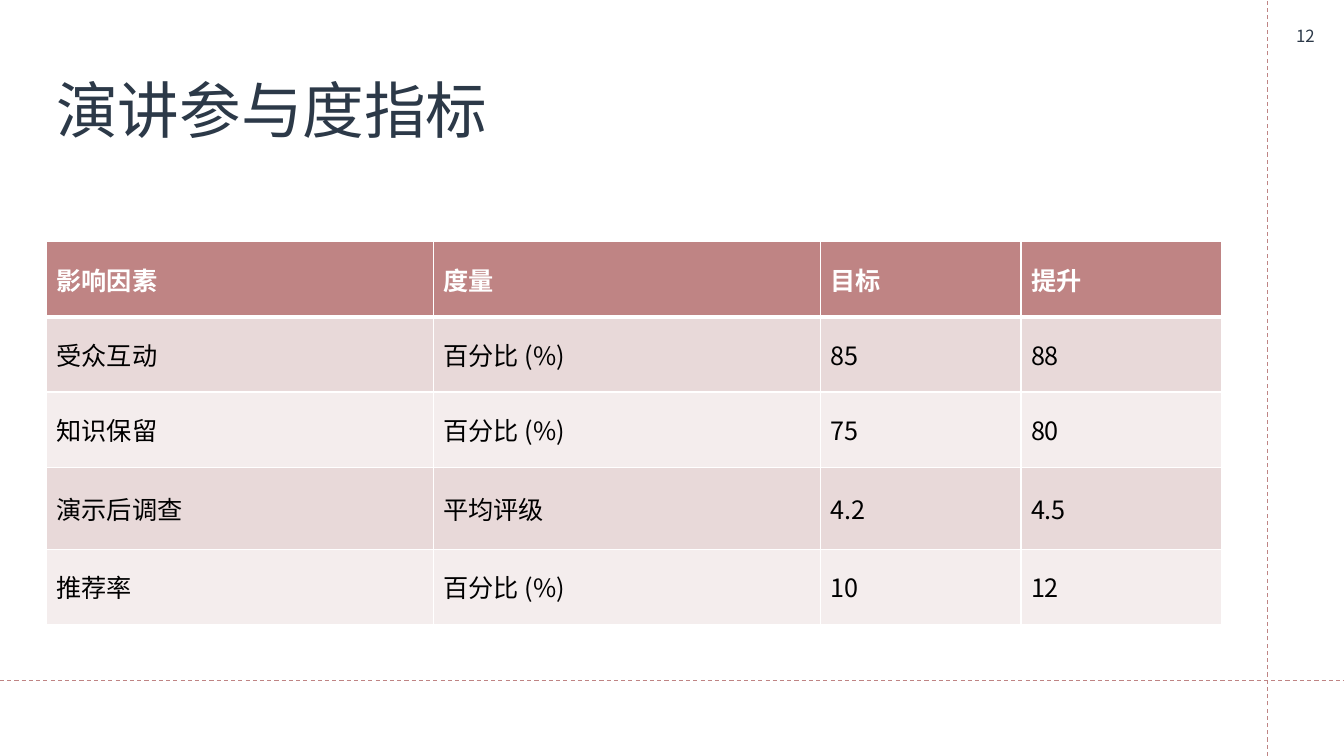
from lxml.etree import SubElement
from pptx import Presentation
from pptx.dml.color import RGBColor
from pptx.enum.dml import MSO_LINE
from pptx.enum.shapes import MSO_CONNECTOR
from pptx.enum.text import MSO_ANCHOR, PP_ALIGN
from pptx.oxml.ns import qn
from pptx.util import Cm, Pt

COLORS = {
    "ink": "2C3948",
    "rose": "BF8484",
    "blush": "E8D9D9",
    "pale": "F4EDED",
    "white": "FFFFFF",
    "black": "000000",
}
FONT = "Noto Sans CJK SC"
WIDTH, HEIGHT = 33.87, 19.05

METRICS = [
    ["影响因素", "度量", "目标", "提升"],
    ["受众互动", "百分比 (%)", "85", "88"],
    ["知识保留", "百分比 (%)", "75", "80"],
    ["演示后调查", "平均评级", "4.2", "4.5"],
    ["推荐率", "百分比 (%)", "10", "12"],
]
COLUMN_WIDTHS = [9.75, 9.75, 5.06, 5.06]
ROW_HEIGHTS = [1.9, 1.9, 1.9, 2.06, 1.9]


class SlideBuilder:
    def __init__(self, slide):
        self.slide = slide

    def color(self, name):
        return RGBColor.from_string(COLORS[name])

    def style_words(self, paragraph, words, size, color, bold=False):
        paragraph.text = words
        font = paragraph.font
        font.name = FONT
        font.size = Pt(size)
        font.bold = bold
        font.color.rgb = self.color(color)
        for run in paragraph.runs:
            SubElement(run.font._element, qn("a:ea"), typeface=FONT)

    def text(self, words, left, top, width, height, size, align=PP_ALIGN.LEFT, spacing=1.0):
        frame = self.slide.shapes.add_textbox(Cm(left), Cm(top), Cm(width), Cm(height)).text_frame
        frame.word_wrap = True
        frame.vertical_anchor = MSO_ANCHOR.MIDDLE
        paragraph = frame.paragraphs[0]
        paragraph.alignment = align
        paragraph.line_spacing = spacing
        self.style_words(paragraph, words, size, "ink")

    def dashed_line(self, x1, y1, x2, y2):
        rule = self.slide.shapes.add_connector(
            MSO_CONNECTOR.STRAIGHT, Cm(x1), Cm(y1), Cm(x2), Cm(y2))
        rule.line.color.rgb = self.color("rose")
        rule.line.width = Pt(0.75)
        rule.line.dash_style = MSO_LINE.DASH
        SubElement(rule._element.spPr, qn("a:effectLst"))

    def border(self, cell, side, points):
        edge = SubElement(cell._tc.get_or_add_tcPr(), qn(f"a:ln{side}"), w=str(Pt(points)))
        SubElement(SubElement(edge, qn("a:solidFill")), qn("a:srgbClr"), val=COLORS["white"])

    def table(self, rows, left, top, widths, heights):
        table = self.slide.shapes.add_table(
            len(rows), len(widths), Cm(left), Cm(top), Cm(sum(widths)), Cm(sum(heights))).table
        for column, width in zip(table.columns, widths):
            column.width = Cm(width)
        for r, (values, height) in enumerate(zip(rows, heights)):
            table.rows[r].height = Cm(height)
            header = r == 0
            fill = "rose" if header else ("pale", "blush")[r % 2]
            for c, value in enumerate(values):
                cell = table.cell(r, c)
                cell.vertical_anchor = MSO_ANCHOR.MIDDLE
                thickness = {"L": 1, "R": 1, "T": 3 if r == 1 else 1, "B": 3 if header else 1}
                for side, points in thickness.items():
                    self.border(cell, side, points)
                cell.fill.solid()
                cell.fill.fore_color.rgb = self.color(fill)
                self.style_words(cell.text_frame.paragraphs[0], value, 18,
                                 "white" if header else "black", header)


def main():
    deck = Presentation()
    deck.slide_width, deck.slide_height = Cm(WIDTH), Cm(HEIGHT)
    builder = SlideBuilder(deck.slides.add_slide(deck.slide_layouts[6]))
    builder.dashed_line(31.93, HEIGHT, 31.93, 0)
    builder.dashed_line(0, 17.15, WIDTH, 17.15)
    builder.text("演讲参与度指标", 1.17, 1.02, 29.62, 3.68, 44, spacing=0.9)
    builder.text("12", 31.95, -0.05, 1.9, 1.9, 12, PP_ALIGN.CENTER)
    builder.table(METRICS, 1.17, 6.08, COLUMN_WIDTHS, ROW_HEIGHTS)
    deck.save("out.pptx")


if __name__ == "__main__":
    main()
